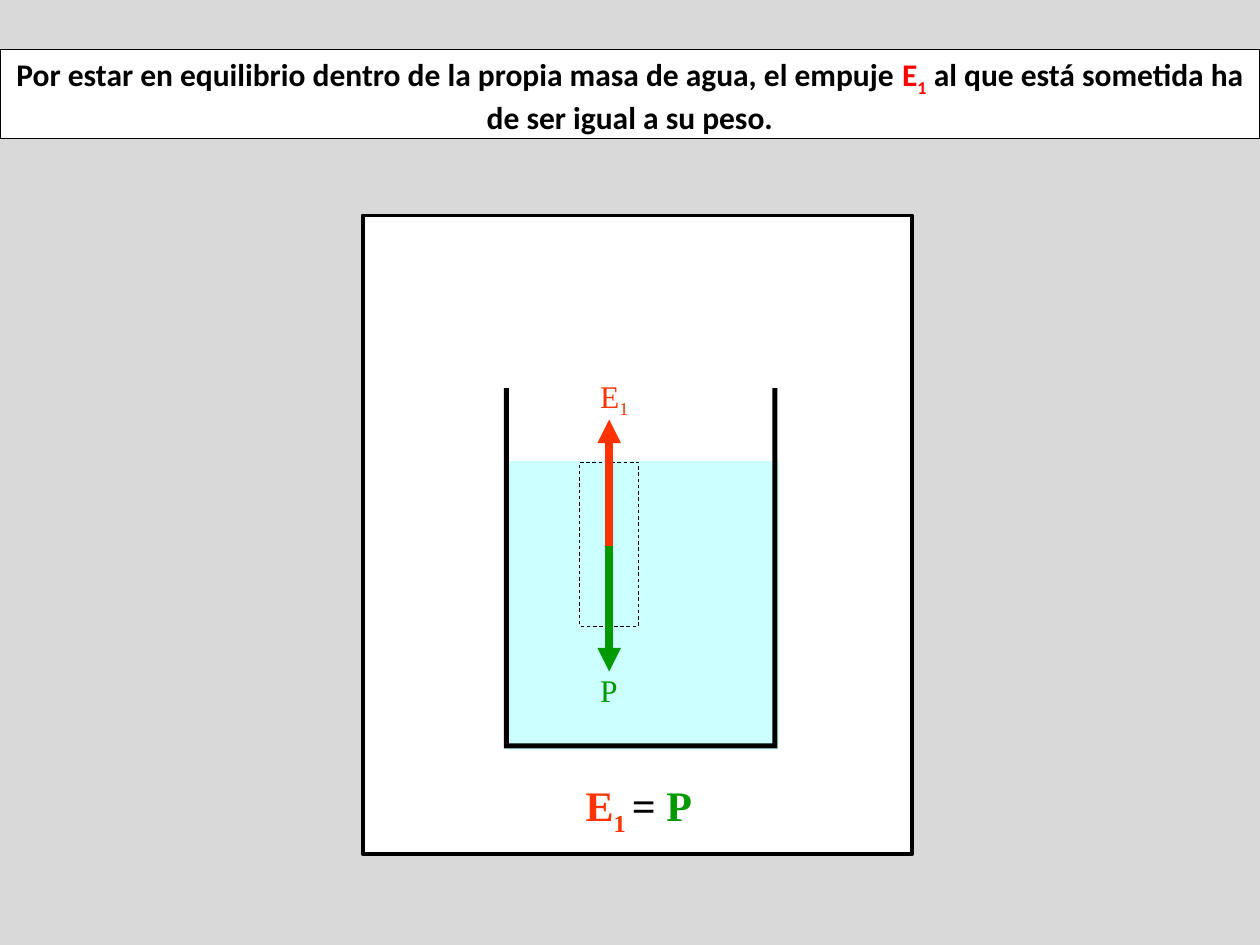
from lxml.etree import SubElement
from pptx import Presentation
from pptx.dml.color import RGBColor
from pptx.enum.dml import MSO_LINE
from pptx.enum.shapes import MSO_CONNECTOR, MSO_SHAPE
from pptx.enum.text import MSO_ANCHOR, MSO_AUTO_SIZE, PP_ALIGN
from pptx.oxml.ns import qn
from pptx.util import Inches, Pt

BLACK = RGBColor(0x00, 0x00, 0x00)
WHITE = RGBColor(0xFF, 0xFF, 0xFF)
GREY = RGBColor(0xD9, 0xD9, 0xD9)
WATER = RGBColor(0xCC, 0xFF, 0xFF)
RED = RGBColor(0xFF, 0x00, 0x00)
THRUST = RGBColor(0xFF, 0x33, 0x00)
WEIGHT = RGBColor(0x00, 0x99, 0x00)
SERIF = "Times New Roman"


def place(shape, box):
    shape.left, shape.top, shape.width, shape.height = map(Inches, box)


def add_span(para, text, color, size, font, bold=False, subscript=False):
    span = para.add_run()
    span.text = text
    span.font.name = font
    span.font.size = Pt(size)
    span.font.bold = bold
    span.font.color.rgb = color
    if subscript:
        span._r.get_or_add_rPr().set("baseline", "-25000")


def add_rectangle(page, box, fill=None, line_width=0):
    shape = page.shapes.add_shape(MSO_SHAPE.RECTANGLE, *map(Inches, box))
    shape.shadow.inherit = False
    paint(shape, fill, line_width)
    return shape


def paint(shape, fill, line_width):
    if fill is None:
        shape.fill.background()
    else:
        shape.fill.solid()
        shape.fill.fore_color.rgb = fill
    if line_width:
        shape.line.color.rgb = BLACK
        shape.line.width = Pt(line_width)
    else:
        shape.line.fill.background()


def add_label(page, box, spans, size, bold=False):
    label = page.shapes.add_textbox(*map(Inches, box))
    label.text_frame.word_wrap = True
    para = label.text_frame.paragraphs[0]
    for text, color, subscript in spans:
        add_span(para, text, color, size, SERIF, bold, subscript)


def add_force(page, x, start, end, color):
    arrow = page.shapes.add_connector(
        MSO_CONNECTOR.STRAIGHT, Inches(x), Inches(start), Inches(x), Inches(end))
    arrow.line.color.rgb = color
    arrow.line.width = Pt(4.5)
    SubElement(arrow.line._get_or_add_ln(), qn("a:tailEnd"), type="triangle")
    SubElement(arrow._element.spPr, qn("a:effectLst"))


def add_banner(page, box):
    title = page.shapes.title
    place(title, box)
    paint(title, WHITE, 0.75)
    frame = title.text_frame
    frame.word_wrap = True
    frame.auto_size = MSO_AUTO_SIZE.NONE
    frame.vertical_anchor = MSO_ANCHOR.TOP
    para = frame.paragraphs[0]
    para.alignment = PP_ALIGN.CENTER
    for text, color, subscript in (
        ("Por estar en equilibrio dentro de la propia masa de agua, el empuje ", BLACK, False),
        ("E", RED, False),
        ("1", RED, True),
        (" al que está sometida ha de ser igual a su peso.", BLACK, False),
    ):
        add_span(para, text, color, 18, "Calibri", True, subscript)


def add_vessel(page, box, wall):
    left, top, width, height = map(Inches, box)
    thickness = Inches(wall)
    right, bottom = left + width, top + height
    inner_left, inner_right = left + thickness, right - thickness
    floor = bottom - thickness
    outline = [
        (inner_left, floor), (inner_right, floor), (inner_right, top),
        (right, top), (right, bottom), (left, bottom), (left, top),
    ]
    builder = page.shapes.build_freeform(inner_left, top)
    builder.add_line_segments(outline, close=True)
    vessel = builder.convert_to_shape()
    vessel.shadow.inherit = False
    paint(vessel, BLACK, 0)


def add_forces(page, box):
    left, top, width, height = box
    block = add_rectangle(page, box, line_width=0.5)
    block.line.dash_style = MSO_LINE.DASH
    x = left + width / 2
    middle = top + height / 2 + 0.01
    label_left = x - 0.17
    add_force(page, x, middle, middle + 1, WEIGHT)
    add_label(page, (label_left, middle + 0.95, 0.44, 0.4), [("P", WEIGHT, False)], 18)
    add_force(page, x, middle, middle - 1, THRUST)
    add_label(page, (label_left, middle - 1.39, 0.44, 0.4),
              [("E", THRUST, False), ("1", THRUST, True)], 18)


def add_experiment(page, box):
    left, top, width, height = box
    vessel_width = 2.17
    add_rectangle(page, box, WHITE, 2)
    add_rectangle(page, (left + 1.14, top + 1.95, vessel_width - 0.01, 2.29), WATER)
    add_vessel(page, (left + 1.12, top + 1.37, vessel_width, 2.86), 0.04)
    add_forces(page, (left + 1.72, top + 1.96, 0.47, 1.3))
    add_label(page, (left + 1.67, top + 4.43, 1.07, 0.5), [
        ("E", THRUST, False), ("1 ", THRUST, True),
        ("= ", BLACK, False), ("P", WEIGHT, False)], 24, bold=True)


def main():
    deck = Presentation()
    deck.slide_width, deck.slide_height = Inches(10), Inches(7.5)
    page = deck.slides.add_slide(deck.slide_layouts[5])
    page.background.fill.solid()
    page.background.fill.fore_color.rgb = GREY
    add_banner(page, (0, 0.39, 10, 0.71))
    add_experiment(page, (2.88, 1.71, 4.36, 5.07))
    deck.save("out.pptx")


if __name__ == "__main__":
    main()
